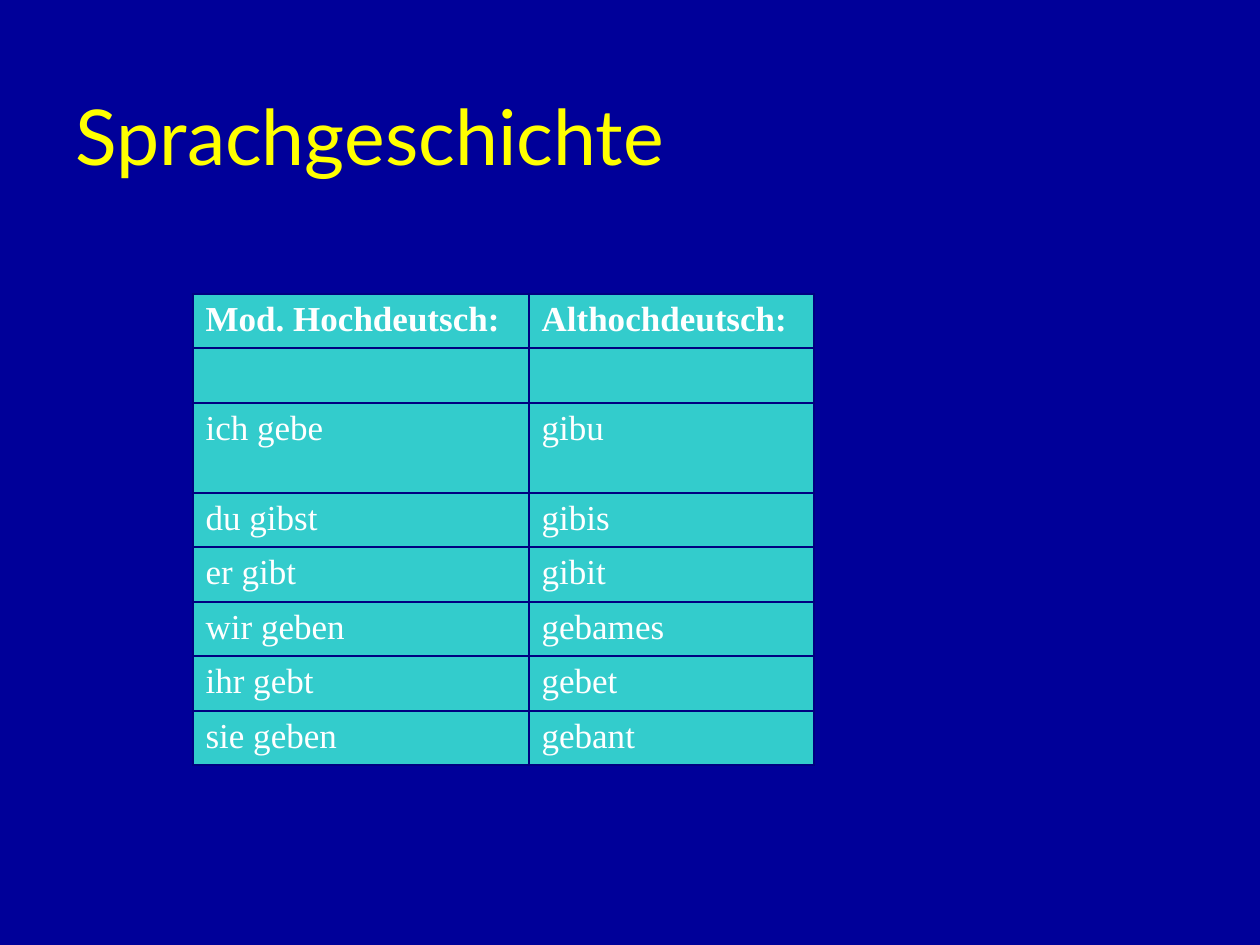
from itertools import pairwise

from lxml import etree
from pptx import Presentation
from pptx import util as u
from pptx.dml.color import RGBColor
from pptx.enum import text
from pptx.oxml.ns import qn

PX = 914400 / 126
COLUMN_EDGES = [193, 529, 814]
ROW_EDGES = [294, 348, 403, 493, 547, 602, 656, 711, 765]
CONJUGATION = [
    ("Mod. Hochdeutsch:", "Althochdeutsch:"),
    ("", ""),
    ("ich gebe", "gibu"),
    ("du gibst", "gibis"),
    ("er gibt", "gibit"),
    ("wir geben", "gebames"),
    ("ihr gebt", "gebet"),
    ("sie geben", "gebant"),
]


def px(length):
    return u.Emu(round(length * PX))


def write(frame, content, *, font, size, color, bold=False):
    frame.text = content
    paragraph = frame.paragraphs[0]
    paragraph.alignment = text.PP_ALIGN.LEFT
    paragraph.font.name = font
    paragraph.font.size = u.Pt(size)
    paragraph.font.bold = bold
    paragraph.font.color.rgb = RGBColor.from_string(color)


presentation = Presentation()
presentation.slide_width, presentation.slide_height = px(1260), px(945)
slide = presentation.slides.add_slide(presentation.slide_layouts[5])
slide.background.fill.solid()
slide.background.fill.fore_color.rgb = RGBColor.from_string("000099")

title = slide.shapes.title
title.left, title.top, title.width, title.height = px(63), px(40), px(1134), px(190)
title.text_frame.vertical_anchor = text.MSO_ANCHOR.MIDDLE
write(title.text_frame, "Sprachgeschichte", font="Lato", size=44, color="FFFF00")

table = slide.shapes.add_table(
    len(CONJUGATION), 2, px(COLUMN_EDGES[0]), px(ROW_EDGES[0]),
    px(COLUMN_EDGES[-1] - COLUMN_EDGES[0]), px(ROW_EDGES[-1] - ROW_EDGES[0]),
).table
for column, (left, right) in zip(table.columns, pairwise(COLUMN_EDGES)):
    column.width = px(right - left)
for row, (top, bottom) in zip(table.rows, pairwise(ROW_EDGES)):
    row.height = px(bottom - top)

for row_index, forms in enumerate(CONJUGATION):
    for column_index, form in enumerate(forms):
        cell = table.cell(row_index, column_index)
        write(cell.text_frame, form, font="Times New Roman", size=20,
              color="FFFFFF", bold=row_index == 0)
        properties = cell._tc.get_or_add_tcPr()
        for side in ("a:lnL", "a:lnR", "a:lnT", "a:lnB"):
            border = etree.SubElement(properties, qn(side), w=str(u.Pt(1)))
            border_fill = etree.SubElement(border, qn("a:solidFill"))
            etree.SubElement(border_fill, qn("a:srgbClr"), val="000080")
        cell.fill.solid()
        cell.fill.fore_color.rgb = RGBColor.from_string("33CCCC")

presentation.save("out.pptx")
